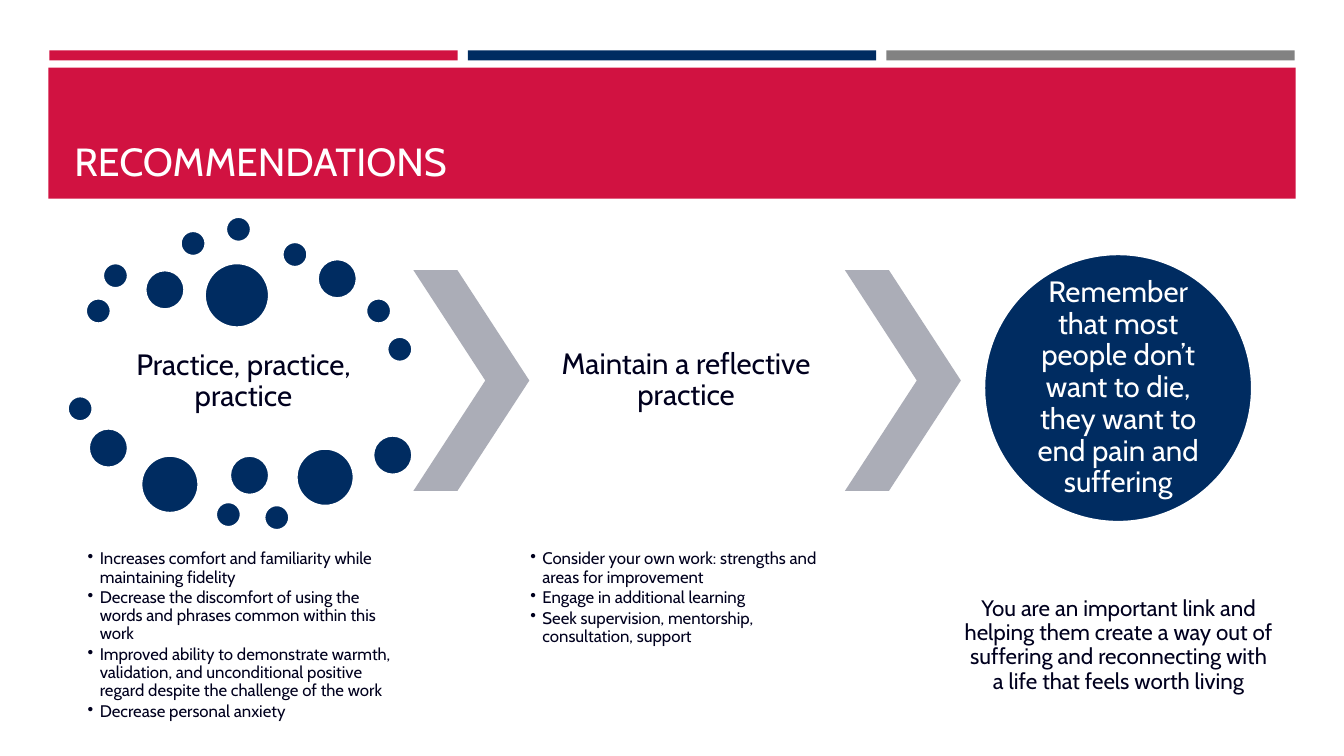
from lxml.etree import SubElement
from pptx import Presentation
from pptx.dml.color import RGBColor
from pptx.enum.shapes import MSO_SHAPE as SHAPE
from pptx.enum.text import MSO_ANCHOR as ANCHOR, PP_ALIGN as ALIGN
from pptx.oxml.ns import qn
from pptx.util import Pt

RED = RGBColor(0xD1, 0x12, 0x41)
NAVY = RGBColor(0x00, 0x2C, 0x61)
GRAY = RGBColor(0x82, 0x82, 0x82)
SILVER = RGBColor(0xAB, 0xAD, 0xB7)
INK = RGBColor(0x00, 0x00, 0x1E)
WHITE = RGBColor(0xFF, 0xFF, 0xFF)

EMU_PER_PX = 9144


def px(n):
    return n * EMU_PER_PX


class Deck:
    font = "Cabin"

    def __init__(self, width, height):
        self.prs = Presentation()
        self.prs.slide_width, self.prs.slide_height = px(width), px(height)
        self.s = self.prs.slides.add_slide(self.prs.slide_layouts[6])

    def shape(self, kind, x, y, w, h, fill):
        sp = self.s.shapes.add_shape(kind, px(x), px(y), px(w), px(h))
        sp.shadow.inherit = False
        sp.fill.solid()
        sp.fill.fore_color.rgb = fill
        sp.line.fill.background()
        return sp

    def bar(self, x, y, w, h, fill):
        self.shape(SHAPE.RECTANGLE, x, y, w, h, fill)

    def circle(self, x, y, size):
        sp = self.shape(SHAPE.OVAL, x, y, size, size, NAVY)
        sp.line.color.rgb = WHITE
        sp.line.width = Pt(1.75)

    def chevron(self, x, y, w, h):
        sp = self.shape(SHAPE.CHEVRON, x, y, w, h, SILVER)
        sp.adjustments[0] = 0.62

    def box(self, x, y, w, h, text, size, color, anchor, inset):
        sp = self.s.shapes.add_textbox(px(x), px(y), px(w), px(h))
        tf = sp.text_frame
        tf.word_wrap = True
        tf.vertical_anchor = anchor
        tf.margin_left = tf.margin_right = px(inset)
        tf.margin_top = tf.margin_bottom = px(min(inset, 5))
        tf.text = text
        for p in tf.paragraphs:
            for r in p.runs:
                r.font.name = self.font
                r.font.size = Pt(size)
                r.font.color.rgb = color
        return tf

    def title(self, x, y, w, h, text):
        self.box(x, y, w, h, text, 28, WHITE, ANCHOR.BOTTOM, 10)

    def centered(self, x, y, w, h, text, size=21, color=INK, inset=3):
        tf = self.box(x, y, w, h, text, size, color, ANCHOR.MIDDLE, inset)
        p = tf.paragraphs[0]
        p.alignment = ALIGN.CENTER
        p.line_spacing = 0.9
        p.space_after = Pt(round(size * 0.35, 1))

    def bullets(self, x, y, w, h, items, size=12):
        tf = self.box(x, y, w, h, "\n".join(items), size, INK, ANCHOR.TOP, 2)
        for p in tf.paragraphs:
            p.level = 1
            p.line_spacing = 0.9
            p.space_after = Pt(round(size * 0.15, 1))
            pPr = p._p.get_or_add_pPr()
            pPr.set("marL", str(px(12)))
            pPr.set("indent", str(px(-12)))
            SubElement(pPr, qn("a:buChar"), char="•")


SMALL, MEDIUM, LARGE, HUGE = 25, 39, 57, 64
DOTS = {
    SMALL: [(85, 296), (102, 261), (179, 229), (224, 215), (280, 240),
            (363, 296), (384, 334), (67, 393), (214, 498), (262, 501)],
    MEDIUM: [(144, 268), (315, 257), (88, 425), (228, 452), (370, 432)],
    LARGE: [(140, 452), (294, 445)],
    HUGE: [(203, 261)],
}
PRACTICE = [
    "Increases comfort and familiarity while maintaining fidelity",
    "Decrease the discomfort of using the words and phrases common within this work",
    "Improved ability to demonstrate warmth, validation, and unconditional "
    "positive regard despite the challenge of the work",
    "Decrease personal anxiety",
]
REFLECTION = [
    "Consider your own work: strengths and areas for improvement",
    "Engage in additional learning",
    "Seek supervision, mentorship, consultation, support",
]
COLUMN_W, DETAIL_Y, DETAIL_H = 313, 544, 193


def main():
    deck = Deck(1333, 750)
    for i, color in enumerate((RED, NAVY, GRAY)):
        deck.bar(49 + i * 415, 50, 405, 10, color)
    deck.bar(48, 67, 1237, 130, RED)
    deck.title(64, 77, 1206, 111, "RECOMMENDATIONS")

    for size, places in DOTS.items():
        for x, y in places:
            deck.circle(x, y, size)
    deck.centered(85, 327, COLUMN_W, 103, "Practice, practice, practice")
    deck.bullets(85, DETAIL_Y, COLUMN_W, DETAIL_H, PRACTICE)

    for x in (410, 838):
        deck.chevron(x, 268, 115, 219)
    deck.centered(524, 268, COLUMN_W, 219, "Maintain a reflective practice")
    deck.bullets(524, DETAIL_Y, COLUMN_W, DETAIL_H, REFLECTION)

    deck.circle(976, 252, 266)
    deck.centered(1015, 291, 188, 188,
                  "Remember that most people don’t want to die, "
                  "they want to end pain and suffering", color=WHITE, inset=0)
    deck.centered(953, DETAIL_Y, COLUMN_W, DETAIL_H,
                  "You are an important link and helping them create a way out of "
                  "suffering and reconnecting with a life that feels worth living",
                  size=16, inset=2)
    deck.prs.save("out.pptx")


if __name__ == "__main__":
    main()
